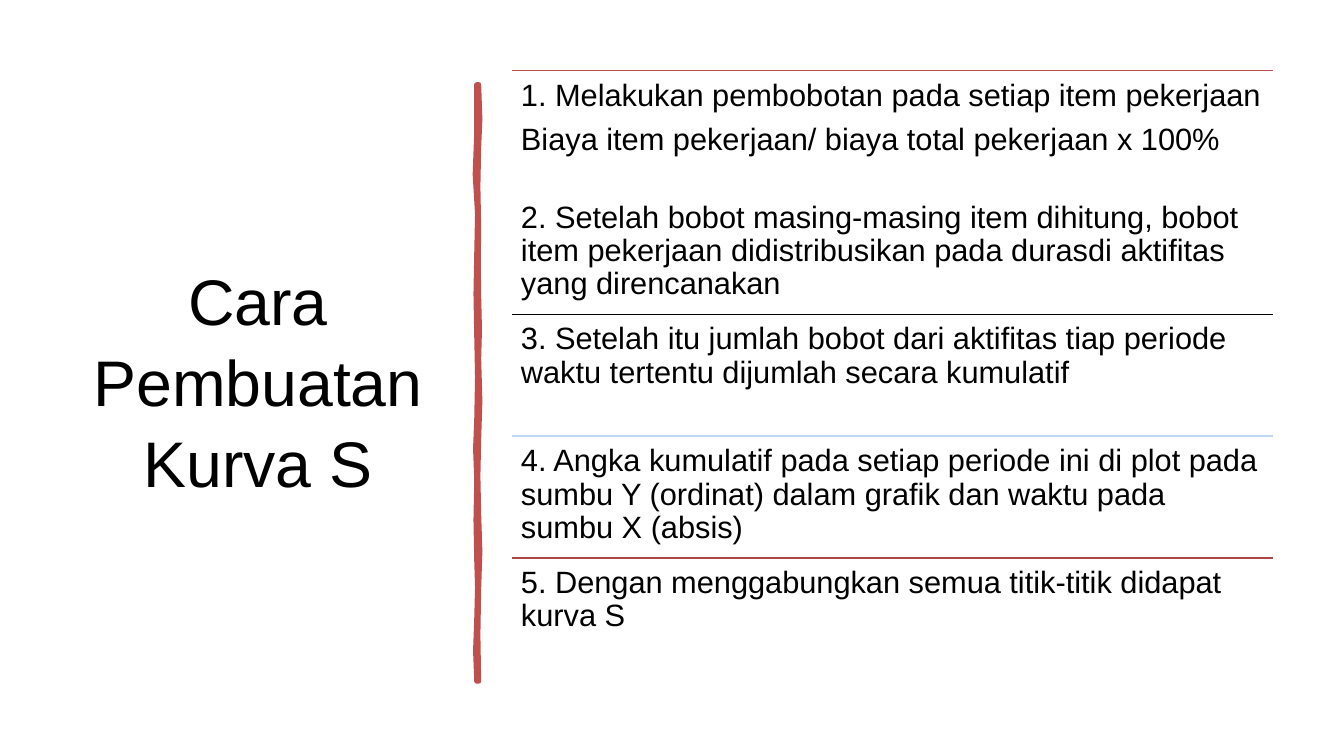
from pptx import Presentation
from pptx.dml.color import RGBColor
from pptx.enum.shapes import MSO_CONNECTOR as Connector
from pptx.enum.text import MSO_ANCHOR as Anchor, MSO_AUTO_SIZE as AutoSize, PP_ALIGN as Align
from pptx.oxml.ns import qn
from pptx.util import Cm, Pt
from lxml import etree

RED = "C0504D"
BLACK = "000000"
LIST_LEFT, LIST_TOP, LIST_WIDTH, STEP_HEIGHT = 12.9, 1.78, 19.18, 3.07

STEPS = [
    (RED, ["1. Melakukan pembobotan pada setiap item pekerjaan",
           "Biaya item pekerjaan/ biaya total pekerjaan x 100%"]),
    ("FFFFFF", ["2. Setelah bobot masing-masing item dihitung, bobot item pekerjaan "
                "didistribusikan pada durasdi aktifitas yang direncanakan"]),
    (BLACK, ["3. Setelah itu jumlah bobot dari aktifitas tiap periode waktu "
             "tertentu dijumlah secara kumulatif"]),
    ("C0D7F5", ["4. Angka kumulatif pada setiap periode ini di plot pada sumbu Y "
                "(ordinat) dalam grafik dan waktu pada sumbu X (absis)"]),
    ("AC4744", ["5. Dengan menggabungkan semua titik-titik didapat kurva S"]),
]

# Brush outline in hundredths of a centimetre: right edge down, left edge up.
BRUSH_RIGHT = [(1207, 213), (1210, 300), (1207, 371), (1205, 470), (1207, 574),
               (1206, 660), (1207, 747), (1209, 830), (1207, 904), (1210, 1010),
               (1207, 1107), (1205, 1200), (1207, 1295), (1210, 1390),
               (1207, 1483), (1205, 1600), (1207, 1717)]
BRUSH_LEFT = [(1201, 1717), (1198, 1640), (1201, 1557), (1203, 1480), (1201, 1415),
              (1199, 1310), (1201, 1212), (1198, 1130), (1201, 1054), (1203, 950),
              (1201, 851), (1199, 740), (1201, 635), (1203, 540), (1197, 440),
              (1201, 330), (1201, 213)]


def color(hex_text):
    return RGBColor.from_string(hex_text)


def set_font(para, size):
    para.font.name = "Arial"
    para.font.size = Pt(size)
    para.font.color.rgb = color(BLACK)


def set_title(page, text):
    title = page.shapes.title
    title.left, title.top, title.width, title.height = Cm(1.75), Cm(1.78), Cm(9.5), Cm(15.52)
    frame = title.text_frame
    frame.text = text
    frame.word_wrap = True
    frame.auto_size = AutoSize.NONE
    frame.vertical_anchor = Anchor.MIDDLE
    para = frame.paragraphs[0]
    para.alignment = Align.CENTER
    para.line_spacing = 1.05
    set_font(para, 46)


def add_brush_stroke(page):
    start, *others = BRUSH_RIGHT + BRUSH_LEFT
    builder = page.shapes.build_freeform(*start, scale=Cm(0.01))
    builder.add_line_segments(others, close=True)
    stroke = builder.convert_to_shape()
    stroke.shadow.inherit = False
    stroke.fill.solid()
    stroke.fill.fore_color.rgb = color(RED)
    stroke.line.color.rgb = color(RED)
    stroke.line.width = Pt(3.25)


def add_rule(shapes, top, line_color):
    rule = shapes.add_connector(Connector.STRAIGHT, Cm(LIST_LEFT), Cm(top),
                                Cm(LIST_LEFT + LIST_WIDTH), Cm(top))
    rule.line.color.rgb = color(line_color)
    rule.line.width = Pt(1)
    etree.SubElement(rule._element.spPr, qn("a:effectLst"))


def add_step_text(shapes, top, lines):
    box = shapes.add_textbox(Cm(LIST_LEFT), Cm(top), Cm(LIST_WIDTH), Cm(STEP_HEIGHT))
    frame = box.text_frame
    frame.word_wrap = True
    frame.margin_left = frame.margin_top = frame.margin_right = frame.margin_bottom = Cm(0.23)
    frame.text = "\n".join(lines)
    for para in frame.paragraphs:
        para.line_spacing = 0.9
        para.space_after = Pt(7.7)
        set_font(para, 22)


def main():
    deck = Presentation()
    deck.slide_width, deck.slide_height = Cm(33.87), Cm(19.05)
    page = deck.slides.add_slide(deck.slide_layouts[5])
    set_title(page, "Cara Pembuatan Kurva S")
    add_brush_stroke(page)
    step_list = page.shapes.add_group_shape()
    for index, (line_color, lines) in enumerate(STEPS):
        top = LIST_TOP + index * STEP_HEIGHT
        add_rule(step_list.shapes, top, line_color)
        add_step_text(step_list.shapes, top, lines)
    deck.save("out.pptx")


if __name__ == "__main__":
    main()
